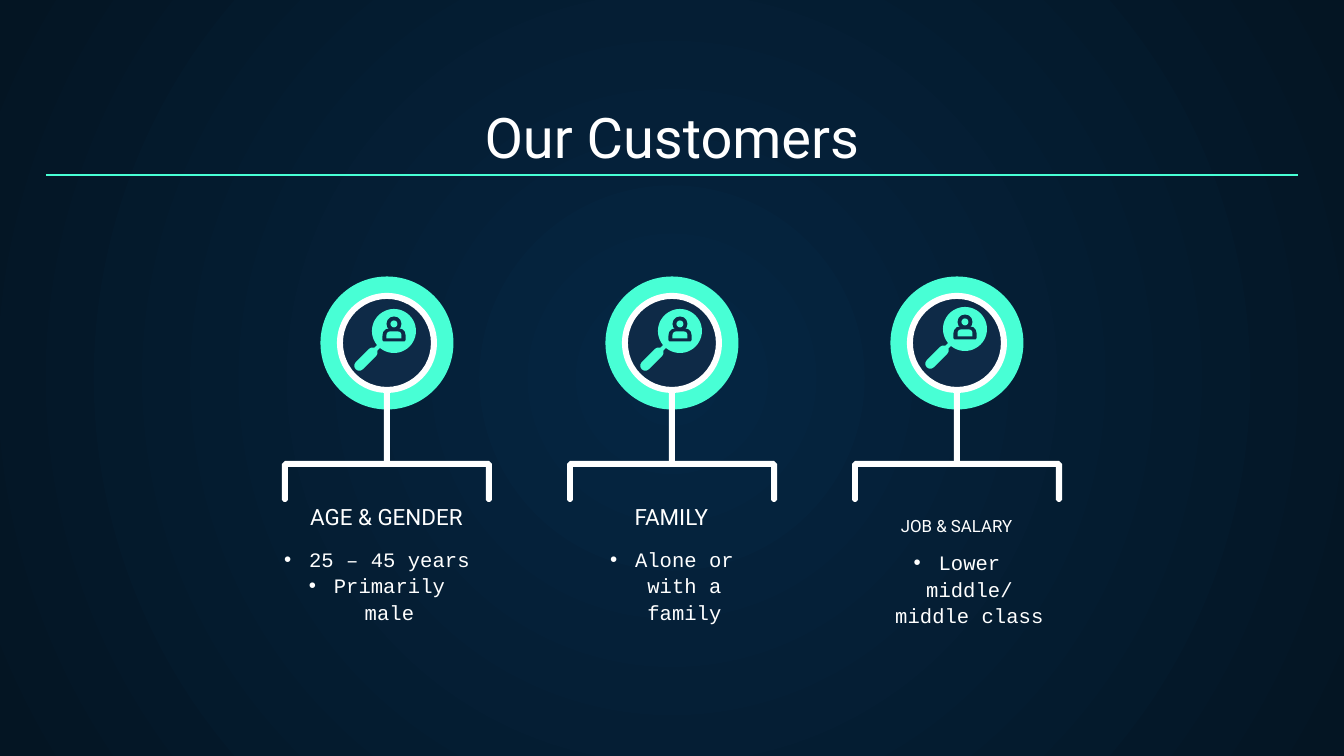
from dataclasses import dataclass

from lxml import etree
from pptx import Presentation
from pptx import util as u
from pptx.dml.color import RGBColor
from pptx.enum import shapes, text
from pptx.oxml import ns

SCALE = 914400 / 134.4
KIND = shapes.MSO_SHAPE
TOP, LOW = text.MSO_ANCHOR.TOP, text.MSO_ANCHOR.BOTTOM


@dataclass(frozen=True)
class Theme:
    """Colours, fonts and type sizes."""
    core: str = "052643"
    edge: str = "041523"
    teal: str = "48FFD5"
    navy: str = "0E2A47"
    white: str = "FFFFFF"
    head: str = "Roboto"
    mono: str = "Courier New"
    title: int = 30
    label: int = 12
    small: int = 9
    body: int = 11


T = Theme()


def px(n):
    """Turn px into EMU."""
    return u.Emu(round(n * SCALE))


def rgb(hue):
    """Turn a hex string into a colour."""
    return RGBColor.from_string(hue)


def paint(shape, hue):
    """Give a shape a plain fill with no line or shadow."""
    shape.shadow.inherit = False
    shape.fill.solid()
    shape.fill.fore_color.rgb = rgb(hue)
    shape.line.fill.background()


def mid(tree, kind, x, y, w, h, hue, turn=0, adj=()):
    """Add a preset shape centred on a point."""
    shape = tree.add_shape(kind, px(x - w / 2), px(y - h / 2), px(w), px(h))
    paint(shape, hue)
    shape.rotation = turn
    for i, val in enumerate(adj):
        shape.adjustments[i] = val


def bullet(para):
    """Give a paragraph a white bullet with a hanging indent."""
    props = para._p.get_or_add_pPr()
    props.set("marL", str(px(25)))
    props.set("indent", str(-px(25)))
    hue = etree.SubElement(props, ns.qn("a:buClr"))
    etree.SubElement(hue, ns.qn("a:srgbClr"), val=T.white)
    etree.SubElement(props, ns.qn("a:buFont"), typeface="Arial")
    etree.SubElement(props, ns.qn("a:buChar"), char="•")


def write(tree, box, lines, face, size, anchor=LOW, dots=False):
    """Add a centred white text box."""
    frame = tree.add_textbox(*map(px, box)).text_frame
    frame.word_wrap = True
    frame.vertical_anchor = anchor
    frame.margin_left = frame.margin_right = u.Inches(0.1)
    frame.margin_top = frame.margin_bottom = u.Inches(0.1)
    for i, line in enumerate(lines):
        para = frame.add_paragraph() if i else frame.paragraphs[0]
        para.text = line
        para.alignment = text.PP_ALIGN.CENTER
        if dots:
            bullet(para)
            para.line_spacing = 1.07
        para.font.name = face
        para.font.size = u.Pt(size)
        para.font.color.rgb = rgb(T.white)


def ground(slide):
    """Fill the slide with a round gradient."""
    fill = slide.background.fill
    fill.gradient()
    for stop, hue in zip(fill.gradient_stops, (T.core, T.edge)):
        stop.color.rgb = rgb(hue)
    grad = slide.element.find(".//" + ns.qn("a:gradFill"))
    grad.remove(grad.find(ns.qn("a:lin")))
    way = etree.SubElement(grad, ns.qn("a:path"), path="circle")
    sides = dict.fromkeys("ltrb", "50000")
    etree.SubElement(way, ns.qn("a:fillToRect"), **sides)


def header(tree, box):
    """Place the title and the rule below it."""
    x, y, w, h = box
    write(tree, box, ["Our Customers"], T.head, T.title)
    rule = tree.add_connector(shapes.MSO_CONNECTOR.STRAIGHT,
                              px(x), px(y + 81), px(x + w), px(y + 81))
    rule.line.color.rgb = rgb(T.teal)
    rule.line.width = u.Pt(0.75)
    etree.SubElement(rule._element.spPr, ns.qn("a:effectLst"))


def bracket(tree, x, y, w, h):
    """Draw a bracket that opens downward, with cut corners."""
    half = [(0, 3), (0, h - 2), (2, h), (4, h), (6, h - 2), (6, 6)]
    pts = half + [(w - a, b) for a, b in reversed(half)] + [(w - 3, 0)]
    form = tree.build_freeform(px(x + 3), px(y), scale=1.0)
    form.add_line_segments([(px(x + a), px(y + b)) for a, b in pts])
    paint(form.convert_to_shape(), T.white)


def lens(tree, x, y):
    """Draw a magnifier holding a person, centred on its glass."""
    icon = tree.add_group_shape().shapes
    oval, dome, bar = KIND.OVAL, KIND.ROUND_2_SAME_RECTANGLE, KIND.ROUNDED_RECTANGLE
    mid(icon, bar, x - 28, y + 28, 29, 10, T.teal, -45, [0.5])
    mid(icon, KIND.RECTANGLE, x - 18, y + 18, 10, 4, T.teal, -45)
    mid(icon, oval, x, y, 44, 44, T.teal)
    mid(icon, dome, x, y + 4, 23, 13, T.navy, 0, [0.5, 0.12])
    mid(icon, oval, x, y - 7, 15, 15, T.navy)
    mid(icon, dome, x, y + 4, 15, 7, T.teal, 0, [0.5, 0])
    mid(icon, oval, x, y - 7, 7, 7, T.teal)


def column(tree, box, label, size, lines, spot, drop, shift=0, grow=0):
    """Place one badge, its bracket, its label and its bullets."""
    x, y, w, h = box
    cx, cy = x + w / 2, y + 67
    mid(tree, KIND.OVAL, cx, cy, 133, 133, T.teal)
    mid(tree, KIND.ROUNDED_RECTANGLE, cx, cy + 57, 6, 134, T.white, 0, [0.5])
    mid(tree, KIND.OVAL, cx, cy, 94, 94, T.navy)
    mid(tree, KIND.DONUT, cx, cy, 100, 100, T.white, 0, [0.06])
    lens(tree, cx + spot[0], cy + spot[1])
    bracket(tree, x, y + 185, w, 41)
    write(tree, (cx - 153, y + 239 + drop, 305, 28), [label], T.head, size)
    wide = 204 + grow
    write(tree, (cx + shift - wide / 2, y + 256 + drop, wide, h - 256),
          lines, T.mono, T.body, TOP, True)


def main():
    """Build the slide and save it."""
    deck = Presentation()
    deck.slide_width, deck.slide_height = px(1344), px(756)
    slide = deck.slides.add_slide(deck.slide_layouts[6])
    tree = slide.shapes
    ground(slide)
    header(tree, (46, 94, 1252, 89))
    cols = [
        ("AGE & GENDER", T.label, ["25 – 45 years", "Primarily male"],
         (7, -12), 0, -10, 20),
        ("FAMILY", T.label, ["Alone or with a family"], (8, -12), 0),
        ("JOB & SALARY", T.small, ["Lower middle/ middle class"], (8, -14), 3),
    ]
    for i, col in enumerate(cols):
        column(tree, (282 + 285 * i, 276, 210, 330), *col)
    deck.save("out.pptx")


if __name__ == "__main__":
    main()
